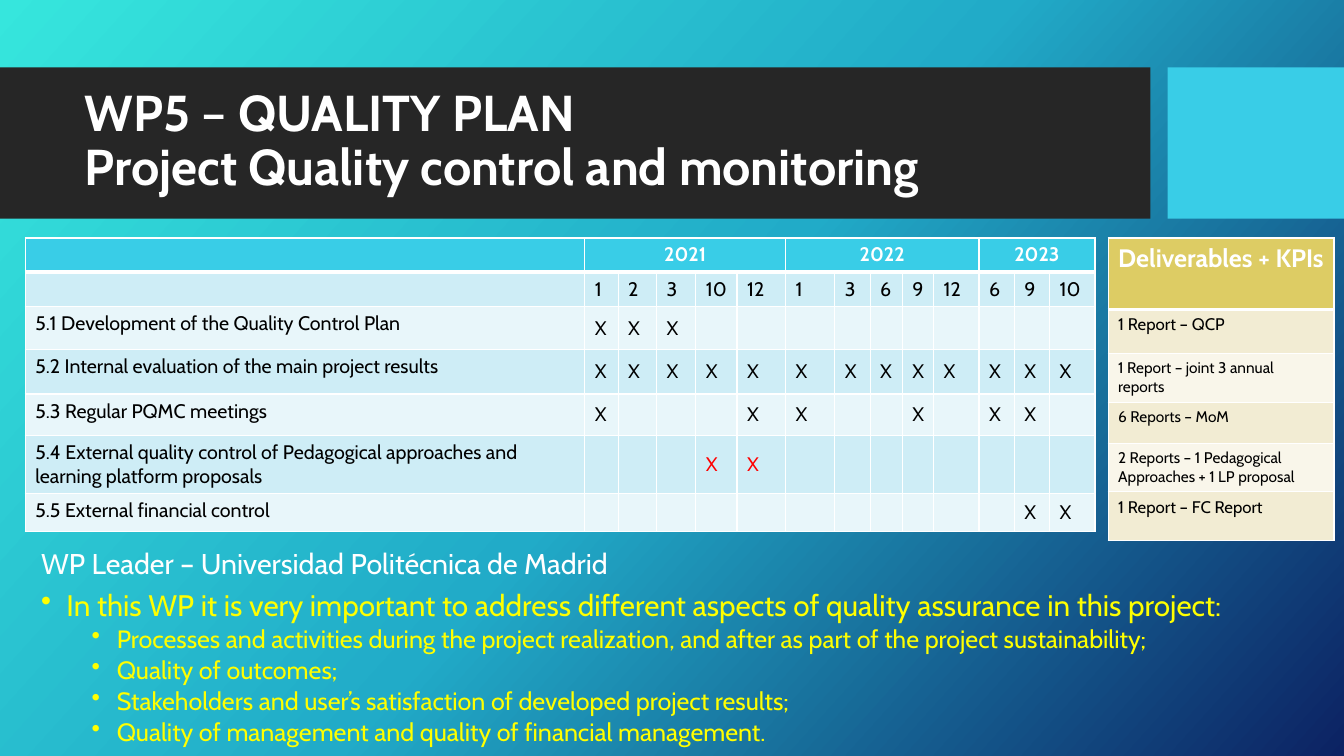
from pptx import Presentation
from pptx.dml.color import RGBColor
from pptx.enum.shapes import MSO_SHAPE
from pptx.enum.text import MSO_ANCHOR, MSO_AUTO_SIZE, PP_ALIGN
from pptx.oxml import parse_xml
from pptx.oxml.ns import nsdecls
from pptx.util import Inches, Pt

WHITE, BLACK, RED, YELLOW = "FFFFFF", "000000", "FF0000", "FFFF00"
DARK, CYAN, GOLD = "262626", "39CDE7", "DDCC64"
BLUE_BANDS = ("CEEDF6", "E8F6FA")
GOLD_BANDS = ("F2ECD3", "F9F6EA")

COLUMN_WEIGHTS = (5.55, .33, .38, .39, .41, .48, .49, .35, .32, .31, .45, .35, .35, .45)
ROW_WEIGHTS = (.34, .34, .43, .44, .41, .57, .38)
YEARS = {"2021": (1, 2, 3, 10, 12), "2022": (1, 3, 6, 9, 12), "2023": (6, 9, 10)}
ACTIVITIES = (
    ("5.1 Development of the Quality Control Plan", "XXX----------", BLACK),
    ("5.2 Internal evaluation of the main project results", "XXXXXXXXXXXXX", BLACK),
    ("5.3 Regular PQMC meetings", "X---XX--X-XX-", BLACK),
    ("5.4 External quality control of Pedagogical approaches and learning platform proposals",
     "---XX--------", RED),
    ("5.5 External financial control", "-----------XX", BLACK),
)

DELIVERABLE_WEIGHTS = (.71, .44, .48, .41, .48, .48)
DELIVERABLES = (
    ("1 Report – QCP", 12),
    ("1 Report – joint 3 annual reports", 11),
    ("6 Reports – MoM", 11),
    ("2 Reports – 1 Pedagogical Approaches + 1 LP proposal", 11),
    ("1 Report – FC Report", 12),
)

QUALITY_ASPECTS = (
    "Processes and activities during the project realization, and after as part of the "
    "project sustainability;",
    "Quality of outcomes;",
    "Stakeholders and user’s satisfaction of developed project results;",
    "Quality of management and quality of financial management.",
)


def color(value):
    return RGBColor.from_string(value)


class SlideBuilder:
    """Draws on one slide; boxes are (left, top, width, height) in percent of its size."""

    font_name = "Cabin"

    def __init__(self, presentation):
        self.width = presentation.slide_width
        self.height = presentation.slide_height
        self.slide = presentation.slides.add_slide(presentation.slide_layouts[5])

    def place(self, box):
        sides = (self.width, self.height) * 2
        return [round(side * share / 100) for side, share in zip(sides, box)]

    def background(self, stops, angle):
        stop_xml = "".join(
            f'<a:gs pos="{position * 1000}"><a:srgbClr val="{value}"/></a:gs>'
            for position, value in stops)
        self.slide.element.cSld.insert(0, parse_xml(
            f'<p:bg {nsdecls("p", "a")}><p:bgPr><a:gradFill rotWithShape="1">'
            f'<a:gsLst>{stop_xml}</a:gsLst><a:lin ang="{angle * 60000}" scaled="0"/>'
            '</a:gradFill><a:effectLst/></p:bgPr></p:bg>'))

    def rectangle(self, box, fill):
        shape = self.slide.shapes.add_shape(MSO_SHAPE.RECTANGLE, *self.place(box))
        shape.shadow.inherit = False
        shape.fill.solid()
        shape.fill.fore_color.rgb = color(fill)
        shape.line.fill.background()

    def run(self, paragraph, text, size, text_color=WHITE, bold=False):
        run = paragraph.add_run()
        run.text = text
        run.font.name = self.font_name
        run.font.size = Pt(size)
        run.font.bold = bold
        run.font.color.rgb = color(text_color)

    def title(self, box, lines, size):
        """Fill the title; each line is a list of (text, bold) pairs."""
        title = self.slide.shapes.title
        title.left, title.top, title.width, title.height = self.place(box)
        self.slide.shapes.element.append(title.element)  # in front of the bands
        frame = title.text_frame
        frame.word_wrap = True
        frame.auto_size = MSO_AUTO_SIZE.NONE
        frame.vertical_anchor = MSO_ANCHOR.MIDDLE
        paragraph = frame.paragraphs[0]
        paragraph.alignment = PP_ALIGN.LEFT
        paragraph.line_spacing = 0.9
        for index, line in enumerate(lines):
            if index:
                paragraph.add_line_break()
            for text, bold in line:
                self.run(paragraph, text, size, bold=bold)

    def text_box(self, box):
        frame = self.slide.shapes.add_textbox(*self.place(box)).text_frame
        frame.word_wrap = True
        return frame

    def line(self, paragraph, text, size, text_color, space_before=0, indent=None, level=0):
        """Write one paragraph; an indent in inches also gives it a bullet."""
        paragraph.level = level
        paragraph.line_spacing = 0.8
        paragraph.space_before = Pt(space_before)
        if indent:
            properties = paragraph._p.get_or_add_pPr()
            properties.set("marL", str(Inches(indent)))
            properties.set("indent", str(Inches(-0.25)))
            properties.append(parse_xml(f'<a:buChar {nsdecls("a")} char="•"/>'))
        self.run(paragraph, text, size, text_color)

    def table(self, box, column_weights, row_weights, header_fill, bands):
        """Add a banded table whose columns and rows share the box by weight."""
        left, top, width, height = self.place(box)
        table = self.slide.shapes.add_table(
            len(row_weights), len(column_weights), left, top, width, height).table
        table.first_row = table.horz_banding = False
        for column, weight in zip(table.columns, column_weights):
            column.width = round(width * weight / sum(column_weights))
        for index, (row, weight) in enumerate(zip(table.rows, row_weights)):
            row.height = round(height * weight / sum(row_weights))
            for cell in row.cells:
                cell.fill.solid()
                cell.fill.fore_color.rgb = color(bands[(index - 1) % 2] if index else header_fill)
                self.borders(cell, top=3 if index == 1 else 1, bottom=1 if index else 3)
                cell.text_frame.paragraphs[0]._p.append(
                    parse_xml(f'<a:endParaRPr {nsdecls("a")} sz="1100"/>'))
        return table

    def borders(self, cell, top, bottom):
        properties = cell._tc.get_or_add_tcPr()
        for index, (side, points) in enumerate(zip("LRTB", (1, 1, top, bottom))):
            properties.insert(index, parse_xml(
                f'<a:ln{side} {nsdecls("a")} w="{Pt(points)}"><a:solidFill>'
                f'<a:srgbClr val="{WHITE}"/></a:solidFill></a:ln{side}>'))

    def cell_text(self, cell, text, size, text_color=BLACK, bold=False,
                  alignment=PP_ALIGN.LEFT, anchor=MSO_ANCHOR.TOP):
        cell.vertical_anchor = anchor
        paragraph = cell.text_frame.paragraphs[0]
        paragraph.alignment = alignment
        self.run(paragraph, text, size, text_color, bold)


def add_schedule(builder):
    table = builder.table((1.88, 31.47, 79.6, 38.8), COLUMN_WEIGHTS, ROW_WEIGHTS, CYAN, BLUE_BANDS)
    column = 1
    for year, months in YEARS.items():
        header = table.cell(0, column)
        header.merge(table.cell(0, column + len(months) - 1))
        builder.cell_text(header, year, 14, WHITE, True, PP_ALIGN.CENTER)
        for month in months:
            builder.cell_text(table.cell(1, column), str(month), 14)
            column += 1
    for row, (activity, marks, mark_color) in enumerate(ACTIVITIES, start=2):
        builder.cell_text(table.cell(row, 0), activity, 14)
        for column, mark in enumerate(marks, start=1):
            if mark == "X":
                builder.cell_text(table.cell(row, column), mark, 14, mark_color,
                                  anchor=MSO_ANCHOR.MIDDLE)


def add_deliverables(builder):
    table = builder.table((82.45, 31.47, 16.8, 40), (1,), DELIVERABLE_WEIGHTS, GOLD, GOLD_BANDS)
    builder.cell_text(table.cell(0, 0), "Deliverables + KPIs", 18, WHITE, True)
    for row, (deliverable, size) in enumerate(DELIVERABLES, start=1):
        builder.cell_text(table.cell(row, 0), deliverable, size)


def add_notes_on_quality(builder):
    frame = builder.text_box((2.33, 72.4, 96.92, 27.6))
    builder.line(frame.paragraphs[0], "WP Leader – Universidad Politécnica de Madrid", 20.4, WHITE)
    builder.line(frame.add_paragraph(),
                 "In this WP it is very important to address different aspects of quality "
                 "assurance in this project:", 21.2, YELLOW, 10, 0.25)
    for aspect in QUALITY_ASPECTS:
        builder.line(frame.add_paragraph(), aspect, 17.9, YELLOW, 5, 0.75, level=1)


def main():
    presentation = Presentation()
    presentation.slide_width, presentation.slide_height = Inches(13.33), Inches(7.5)
    builder = SlideBuilder(presentation)
    builder.background(((0, "36E6DD"), (50, "21ABC8"), (100, "0C2263")), 42)
    builder.rectangle((0, 8.93, 85.6, 20), DARK)
    builder.rectangle((86.87, 8.93, 13.13, 20), CYAN)
    builder.title((5.55, 10.93, 78.84, 15.73), (
        (("WP5", True), (" – ", False), ("QUALITY PLAN", True)),
        (("Project Quality control and monitoring", True),)), 36)
    add_deliverables(builder)
    add_schedule(builder)
    add_notes_on_quality(builder)
    presentation.save("out.pptx")


if __name__ == "__main__":
    main()
